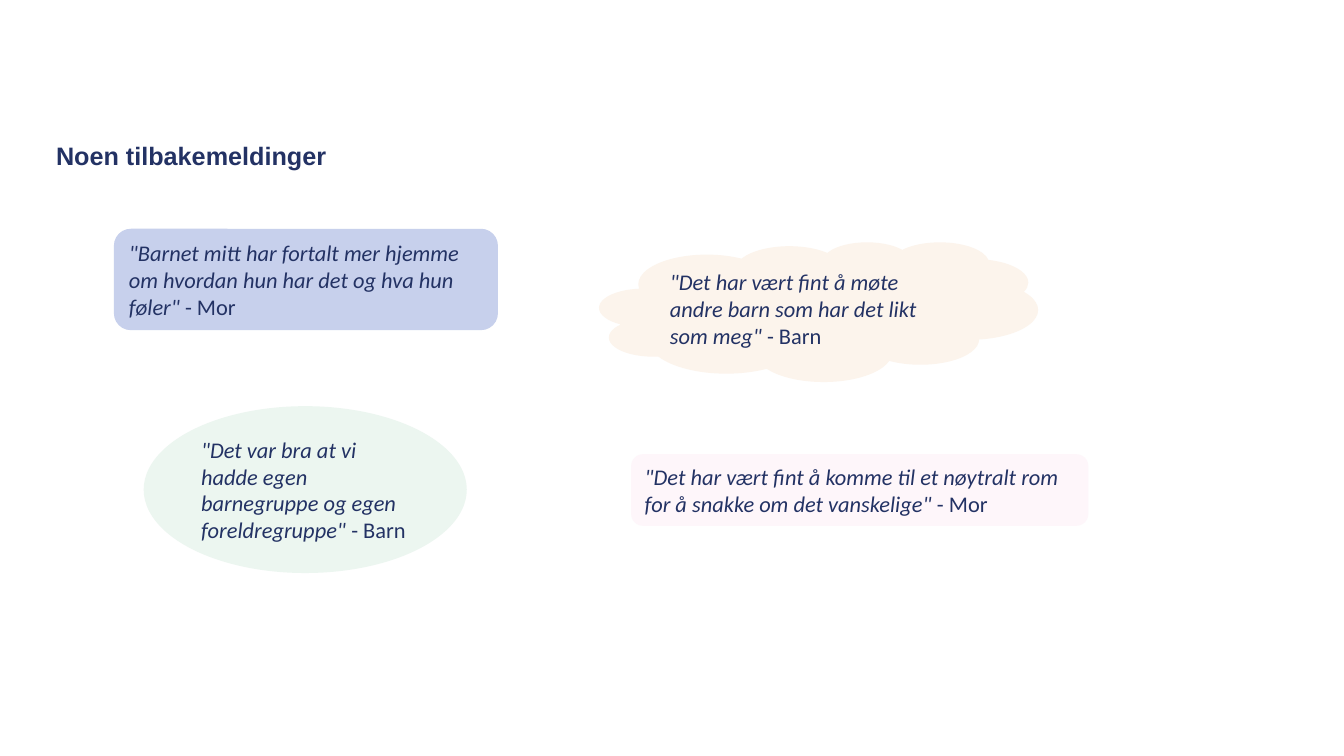
import pptx
import pptx.util
import pptx.dml.color
import pptx.enum.shapes
import pptx.enum.text

Cm = pptx.util.Cm
Pt = pptx.util.Pt
MSO_SHAPE = pptx.enum.shapes.MSO_SHAPE
MSO_ANCHOR = pptx.enum.text.MSO_ANCHOR
PP_ALIGN = pptx.enum.text.PP_ALIGN

NAVY = "233264"


def rgb(color):
    return pptx.dml.color.RGBColor.from_string(color)


prs = pptx.Presentation()
prs.slide_width = Cm(67.72)
prs.slide_height = Cm(38.1)
s = prs.slides.add_slide(prs.slide_layouts[5])

title = s.shapes.title
title.left, title.top, title.width, title.height = Cm(2.57), Cm(7.11), Cm(62.59), Cm(3.02)
tf = title.text_frame
tf.text = "Noen tilbakemeldinger"
tf.vertical_anchor = MSO_ANCHOR.TOP
p = tf.paragraphs[0]
p.alignment = PP_ALIGN.LEFT
p.line_spacing = 0.9
p.font.name = "Arial"
p.font.size = Pt(36)
p.font.bold = True
p.font.color.rgb = rgb(NAVY)

# Shape, left, top, width, height (cm), fill, quote, speaker
quotes = [
    (MSO_SHAPE.FLOWCHART_ALTERNATE_PROCESS, 5.74, 11.53, 19.35, 5.11, "C7D0EC",
     "Barnet mitt har fortalt mer hjemme om hvordan hun har det og hva hun føler", "Mor"),
    (MSO_SHAPE.CLOUD, 30.2, 12.19, 22.1, 7.04, "FCF4EC",
     "Det har vært fint å møte andre barn som har det likt som meg", "Barn"),
    (MSO_SHAPE.FLOWCHART_CONNECTOR, 7.24, 20.47, 16.28, 8.41, "ECF6F0",
     "Det var bra at vi hadde egen barnegruppe og egen foreldregruppe", "Barn"),
    (MSO_SHAPE.FLOWCHART_ALTERNATE_PROCESS, 31.8, 22.89, 23.04, 3.61, "FEF6FA",
     "Det har vært fint å komme til et nøytralt rom for å snakke om det vanskelige", "Mor"),
]

for kind, left, top, width, height, fill, quote, speaker in quotes:
    sp = s.shapes.add_shape(kind, Cm(left), Cm(top), Cm(width), Cm(height))
    sp.shadow.inherit = False
    sp.fill.solid()
    sp.fill.fore_color.rgb = rgb(fill)
    sp.line.fill.background()

    tf = sp.text_frame
    tf.word_wrap = True
    tf.vertical_anchor = MSO_ANCHOR.MIDDLE
    tf.margin_left = tf.margin_right = Cm(0.51)
    tf.margin_top = tf.margin_bottom = Cm(0.25)

    p = tf.paragraphs[0]
    p.alignment = PP_ALIGN.LEFT
    p.font.name = "Calibri"
    p.font.size = Pt(32)
    p.font.color.rgb = rgb(NAVY)
    r = p.add_run()
    r.text = f'"{quote}"'
    r.font.italic = True
    r = p.add_run()
    r.text = f" - {speaker}"

prs.save("out.pptx")
